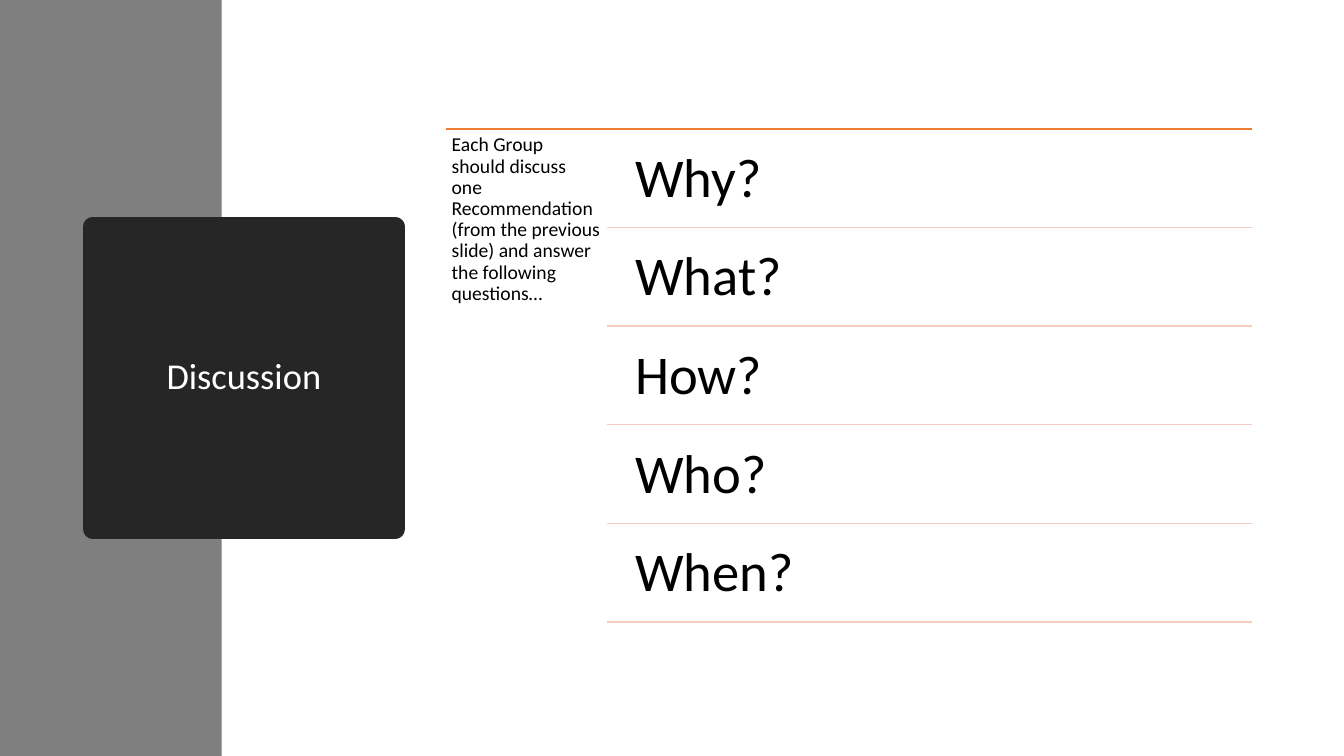
"""Build a discussion slide with a title block and a ruled list of questions."""
from lxml import etree
from pptx import Presentation
from pptx.dml.color import RGBColor
from pptx.enum.shapes import MSO_CONNECTOR, MSO_SHAPE
from pptx.enum.text import MSO_ANCHOR, PP_ALIGN
from pptx.oxml.ns import qn
from pptx.util import Inches, Pt

RECTANGLE = MSO_SHAPE.RECTANGLE
STRAIGHT = MSO_CONNECTOR.STRAIGHT
TOP, MIDDLE = MSO_ANCHOR.TOP, MSO_ANCHOR.MIDDLE
LEFT, CENTER = PP_ALIGN.LEFT, PP_ALIGN.CENTER

COLORS = {
    "band": "7F7F7F",
    "title": "262626",
    "title_text": "FFFFFF",
    "text": "000000",
    "top_rule": "ED7D31",
    "row_rule": "F6CCBE",
}
FONT = "Calibri"
SLIDE_WIDTH, SLIDE_HEIGHT = 13.33, 7.5
TITLE_LEFT, TITLE_SIZE = 0.92, 3
GRID_LEFT, GRID_TOP = 4.42, 1.28
GRID_WIDTH, GRID_HEIGHT = 8, 4.89
COLUMNS = 5
QUESTIONS = ["Why?", "What?", "How?", "Who?", "When?"]
TASK = ("Each Group should discuss one Recommendation "
        "(from the previous slide) and answer the following questions…")


def color(name):
    return RGBColor.from_string(COLORS[name])


def column_x(column):
    return GRID_LEFT + column * GRID_WIDTH / COLUMNS


def row_y(row):
    return GRID_TOP + row * GRID_HEIGHT / len(QUESTIONS)


def add_block(slide, left, top, width, height, fill):
    shape = slide.shapes.add_shape(
        RECTANGLE, Inches(left), Inches(top), Inches(width), Inches(height))
    shape.shadow.inherit = False
    shape.fill.solid()
    shape.fill.fore_color.rgb = color(fill)
    shape.line.fill.background()
    return shape


def write_text(shape, text, size, text_color, alignment=LEFT, anchor=TOP):
    text_frame = shape.text_frame
    text_frame.text = text
    text_frame.word_wrap = True
    text_frame.vertical_anchor = anchor
    paragraph = text_frame.paragraphs[0]
    paragraph.alignment = alignment
    paragraph.line_spacing = 0.9
    font = paragraph.runs[0].font
    font.name = FONT
    font.size = Pt(size)
    font.color.rgb = color(text_color)


def add_text(slide, left, top, width, height, text, size, inset):
    shape = slide.shapes.add_textbox(
        Inches(left), Inches(top), Inches(width), Inches(height))
    write_text(shape, text, size, "text")
    text_frame = shape.text_frame
    text_frame.margin_left = text_frame.margin_right = Inches(inset)
    text_frame.margin_top = text_frame.margin_bottom = Inches(inset)


def add_rule(slide, column, row, line_color):
    y = Inches(row_y(row))
    rule = slide.shapes.add_connector(
        STRAIGHT, Inches(column_x(column)), y, Inches(column_x(COLUMNS)), y)
    rule.line.color.rgb = color(line_color)
    rule.line.width = Pt(1)
    etree.SubElement(rule._element.spPr, qn("a:effectLst"))


def add_title(slide):
    top = (SLIDE_HEIGHT - TITLE_SIZE) / 2
    title = add_block(slide, TITLE_LEFT, top, TITLE_SIZE, TITLE_SIZE, "title")
    title.line.color.rgb = color("title")
    title.line.width = Pt(13.75)
    etree.SubElement(title.line._get_or_add_ln(), qn("a:round"))
    write_text(title, "Discussion", 26, "title_text", CENTER, MIDDLE)


def add_questions(slide):
    left = column_x(1) + 0.12
    width = column_x(COLUMNS) - left
    for row, question in enumerate(QUESTIONS):
        add_text(slide, left, row_y(row) + 0.05, width, 0.93, question, 39, 0.16)
        add_rule(slide, 1, row + 1, "row_rule")


def main():
    presentation = Presentation()
    presentation.slide_width = Inches(SLIDE_WIDTH)
    presentation.slide_height = Inches(SLIDE_HEIGHT)
    slide = presentation.slides.add_slide(presentation.slide_layouts[6])
    add_block(slide, 0, 0, SLIDE_WIDTH * 0.165, SLIDE_HEIGHT, "band")
    add_title(slide)
    add_rule(slide, 0, 0, "top_rule")
    add_text(slide, GRID_LEFT, GRID_TOP, GRID_WIDTH / COLUMNS, GRID_HEIGHT,
             TASK, 14, 0.06)
    add_questions(slide)
    presentation.save("out.pptx")


if __name__ == "__main__":
    main()
